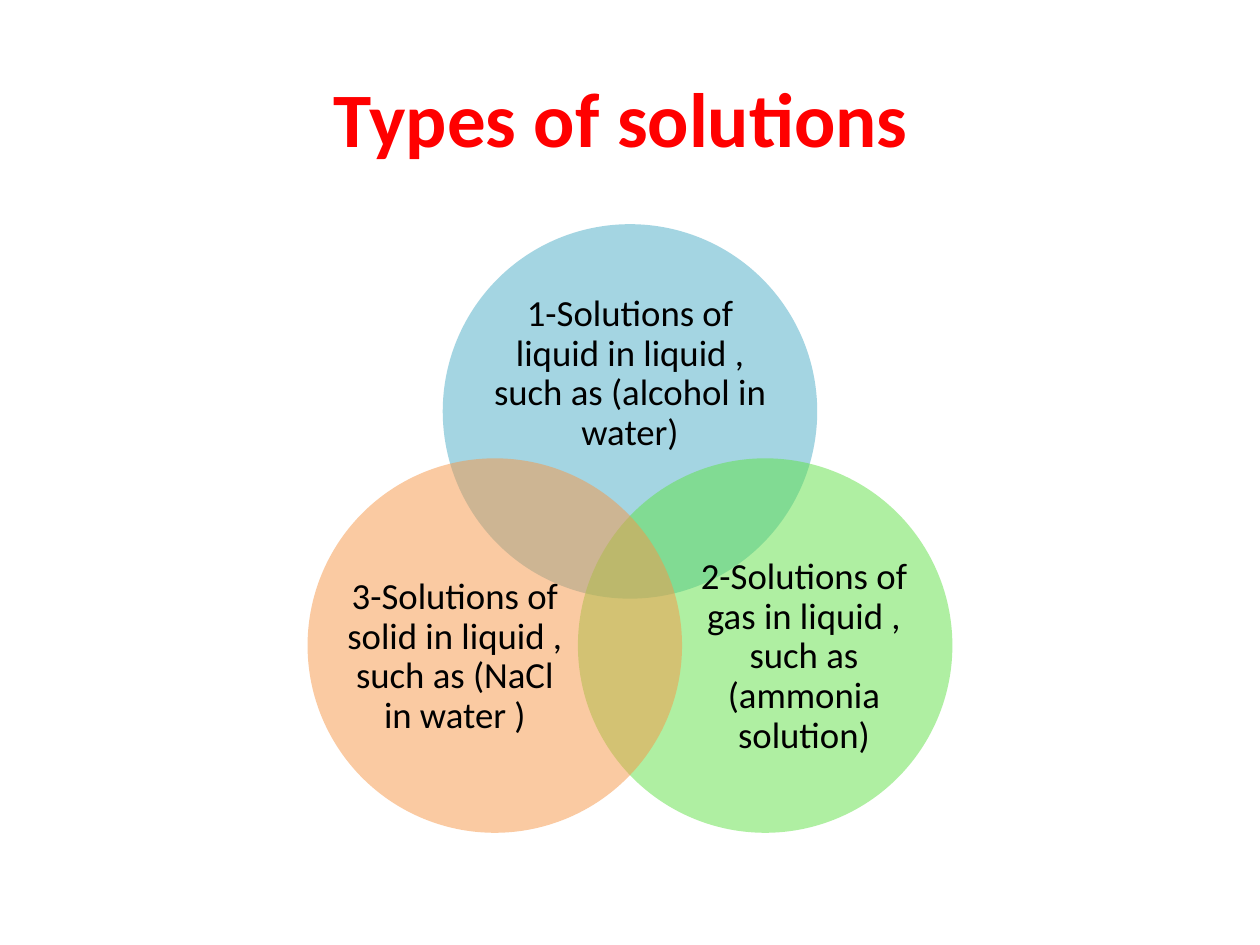
from dataclasses import dataclass
from math import cos, radians, sin

from lxml.etree import SubElement
from pptx import Presentation
from pptx.dml.color import RGBColor
from pptx.enum.shapes import MSO_SHAPE as Shape
from pptx.enum.text import MSO_ANCHOR as Anchor, PP_ALIGN as Align
from pptx.oxml.ns import qn
from pptx.slide import Slide
from pptx.util import Pt

COLORS = {
    "title": "FF0000",
    "text": "000000",
    "liquid": "4BACC6",
    "gas": "60E146",
    "solid": "F79646",
}
FONT = "Calibri"
DIAGRAM_CENTER = (360, 324.3)
ORBIT = 89.2
DIAMETER = 214


@dataclass
class Box:
    left: float
    top: float
    width: float
    height: float


@dataclass
class Solution:
    text: str
    color: str
    angle: float
    label: Box


SOLUTIONS = [
    Solution("1-Solutions of liquid in liquid , such as (alcohol in water)",
             "liquid", -90, Box(281.5, 165.6, 157, 96.5)),
    Solution("2-Solutions of gas in liquid , such as (ammonia solution)",
             "gas", 30, Box(395.3, 316.8, 128.2, 117.4)),
    Solution("3-Solutions of solid in liquid , such as (NaCl in water )",
             "solid", 150, Box(195.8, 316.8, 128.2, 117.4)),
]


def add_text(slide: Slide, box: Box, text: str, size: float, color: str,
             bold: bool = False, inset: float = 0, spacing: float = 1) -> None:
    shape = slide.shapes.add_textbox(
        Pt(box.left), Pt(box.top), Pt(box.width), Pt(box.height))
    frame = shape.text_frame
    frame.text = text
    frame.word_wrap = True
    frame.vertical_anchor = Anchor.MIDDLE
    frame.margin_left = frame.margin_right = Pt(inset)
    frame.margin_top = frame.margin_bottom = Pt(inset / 2)
    paragraph = frame.paragraphs[0]
    paragraph.alignment = Align.CENTER
    paragraph.line_spacing = spacing
    font = paragraph.runs[0].font
    font.name = FONT
    font.size = Pt(size)
    font.bold = bold
    font.color.rgb = RGBColor.from_string(COLORS[color])


def add_circle(slide: Slide, solution: Solution) -> None:
    """Place a half-transparent circle at its angle around the diagram centre."""
    angle = radians(solution.angle)
    left = DIAGRAM_CENTER[0] + ORBIT * cos(angle) - DIAMETER / 2
    top = DIAGRAM_CENTER[1] + ORBIT * sin(angle) - DIAMETER / 2
    circle = slide.shapes.add_shape(
        Shape.OVAL, Pt(left), Pt(top), Pt(DIAMETER), Pt(DIAMETER))
    circle.shadow.inherit = False
    circle.line.fill.background()
    circle.fill.solid()
    circle.fill.fore_color.rgb = RGBColor.from_string(COLORS[solution.color])
    color = circle.fill._xPr.find(qn("a:solidFill"))[0]
    SubElement(color, qn("a:alpha"), val="50000")


def main() -> None:
    presentation = Presentation()
    presentation.slide_width = Pt(720)
    presentation.slide_height = Pt(540)
    slide = presentation.slides.add_slide(presentation.slide_layouts[6])
    add_text(slide, Box(36, 21.6, 648, 90), "Types of solutions ", 44, "title",
             bold=True, inset=7.2)
    for solution in SOLUTIONS:
        add_circle(slide, solution)
        add_text(slide, solution.label, solution.text, 21, "text", spacing=0.9)
    presentation.save("out.pptx")


if __name__ == "__main__":
    main()
